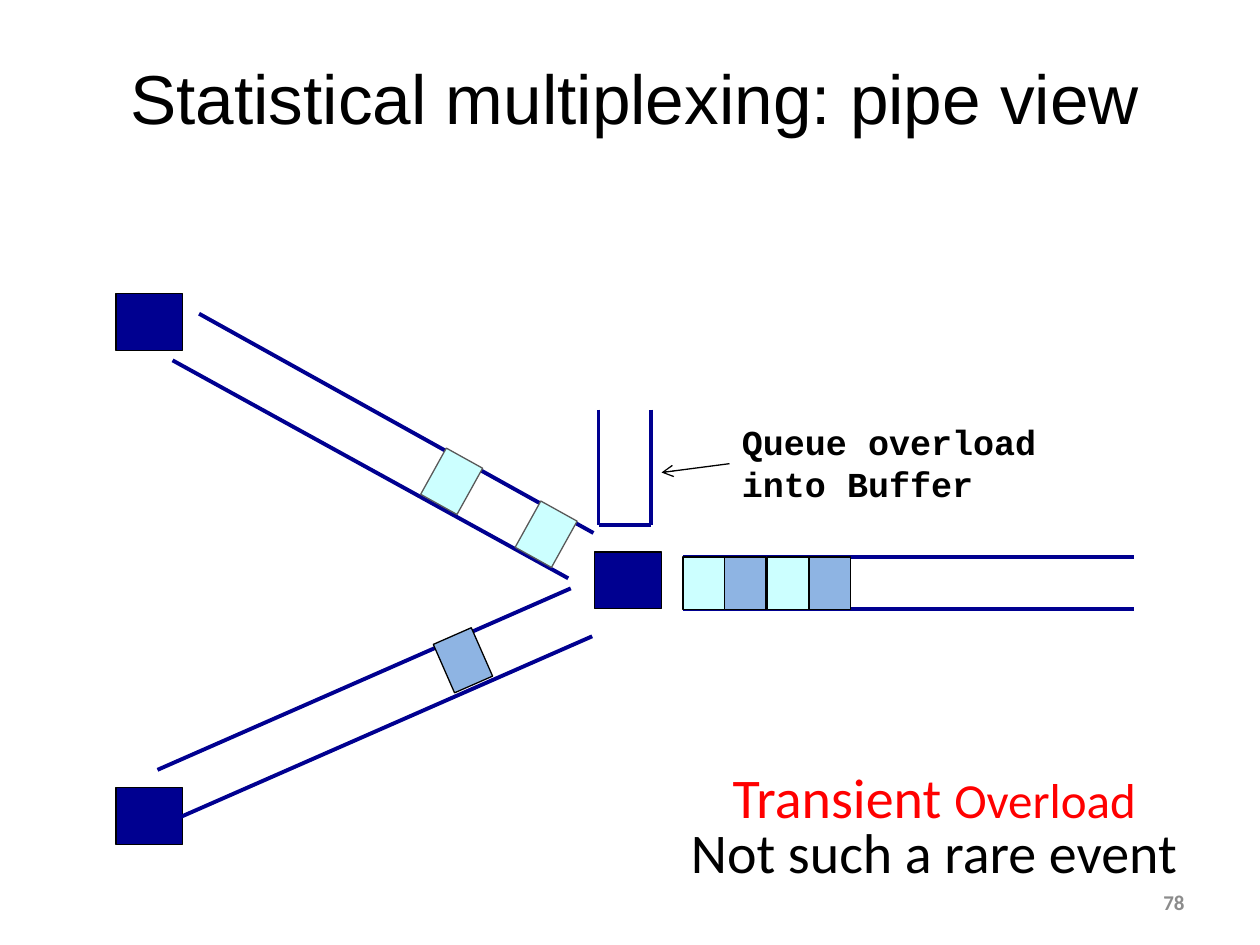
from lxml import etree
from pptx import Presentation, util as u
from pptx.dml.color import RGBColor
from pptx.enum import shapes, text
from pptx.oxml.ns import qn

PX = u.Inches(1) // 100
NAVY, CYAN, BLUE = "000090", "CCFFFF", "8EB4E3"
BLACK, GRAY, RED = "000000", "595959", "FF0000"
PACKET_WIDTH, PACKET_HEIGHT = 33, 42


def px(*lengths):
    return [u.Emu(length * PX) for length in lengths]


def color(value):
    return RGBColor.from_string(value)


def add_block(parent, box, fill, outline=BLACK, rotation=0):
    shape = parent.shapes.add_shape(shapes.MSO_SHAPE.RECTANGLE, *px(*box))
    shape.shadow.inherit = False
    shape.rotation = rotation
    shape.fill.solid()
    shape.fill.fore_color.rgb = color(fill)
    shape.line.color.rgb = color(outline)
    shape.line.width = u.Pt(0.75)


def add_line(parent, ends, stroke=NAVY, width=2.25, arrow=False):
    line = parent.shapes.add_connector(shapes.MSO_CONNECTOR.STRAIGHT, *px(*ends))
    line.line.color.rgb = color(stroke)
    line.line.width = u.Pt(width)
    properties = line._element.spPr
    if arrow:
        outline = properties.find(qn("a:ln"))
        etree.SubElement(outline, qn("a:tailEnd"), type="arrow")
    etree.SubElement(properties, qn("a:effectLst"))


def add_text(slide, box, lines, font, size, fill=BLACK, bold=False,
             align=text.PP_ALIGN.CENTER, anchor=text.MSO_ANCHOR.TOP, wrap=True):
    """Add one paragraph per line and return the text frame."""
    frame = slide.shapes.add_textbox(*px(*box)).text_frame
    frame.word_wrap = wrap
    frame.vertical_anchor = anchor
    frame.text = "\n".join(lines)
    for paragraph in frame.paragraphs:
        paragraph.alignment = align
        paragraph.font.name = font
        paragraph.font.size = u.Pt(size)
        paragraph.font.bold = bold
        paragraph.font.color.rgb = color(fill)
    return frame


def add_pipe(slide, left, top, walls, packets=(), outline=BLACK, rotation=0):
    """Group walls (x1, y1, x2, y2) and packets (x, y, fill), offset from left, top."""
    group = slide.shapes.add_group_shape()
    for x1, y1, x2, y2 in walls:
        add_line(group, (left + x1, top + y1, left + x2, top + y2))
    for x, y, fill in packets:
        box = (left + x, top + y, PACKET_WIDTH, PACKET_HEIGHT)
        add_block(group, box, fill, outline, rotation)


def add_nodes(slide):
    for left, top in ((472, 438), (92, 233), (92, 625)):
        add_block(slide, (left, top, 53, 45), NAVY)


def add_input_pipes(slide):
    add_pipe(slide, 137, 249, [(21, 0, 334, 174), (0, 37, 314, 210)],
             [(280, 154, CYAN), (205, 112, CYAN)], GRAY, 29)
    add_pipe(slide, 125, 467, [(0, 144, 328, 0), (17, 182, 345, 38)],
             [(226, 36, BLUE)], rotation=336.3)


def add_output_pipe(slide, left, top, width, height):
    packets = [(round(i * 100 / 3), 0, fill)
               for i, fill in enumerate((CYAN, BLUE, CYAN, BLUE))]
    walls = [(0, y, width, y) for y in (0, height)]
    add_pipe(slide, left, top, walls, packets)


def add_buffer(slide, left, top, width, height):
    """Draw the open-topped queue with its label and arrow."""
    add_pipe(slide, left, top, [(0, 0, 0, height), (width, 0, width, height),
                                (0, height, width, height)])
    add_text(slide, (left + 104, top + 4, 256, 77), ["Queue overload", "into Buffer"],
             "Courier New", 20, bold=True, align=text.PP_ALIGN.LEFT, wrap=False)
    add_line(slide, (left + 104, top + 43, left + 50, top + 50), BLACK, 0.75, arrow=True)


def add_conclusion(slide, left, top, width):
    frame = add_text(slide, (left, top, width, 64), ["Transient "], "Calibri", 32, RED)
    overload = frame.paragraphs[0].add_run()
    overload.text = "Overload"
    overload.font.size = u.Pt(28)
    add_text(slide, (left, top + 44, width, 64), ["Not such a rare event"], "Calibri", 32)


def main():
    presentation = Presentation()
    presentation.slide_width, presentation.slide_height = px(1000, 750)
    slide = presentation.slides.add_slide(presentation.slide_layouts[6])
    add_text(slide, (50, 13, 908, 128), ["Statistical multiplexing: pipe view"],
             "Arial", 39.6, anchor=text.MSO_ANCHOR.MIDDLE)
    add_nodes(slide)
    add_input_pipes(slide)
    add_conclusion(slide, 508, 600, 467)
    add_buffer(slide, 475, 325, 42, 92)
    add_output_pipe(slide, 542, 442, 358, 41)
    add_text(slide, (717, 696, 233, 40), ["78"], "Calibri", 12, "8C8C8C", bold=True,
             align=text.PP_ALIGN.RIGHT, anchor=text.MSO_ANCHOR.MIDDLE)
    presentation.save("out.pptx")


if __name__ == "__main__":
    main()
